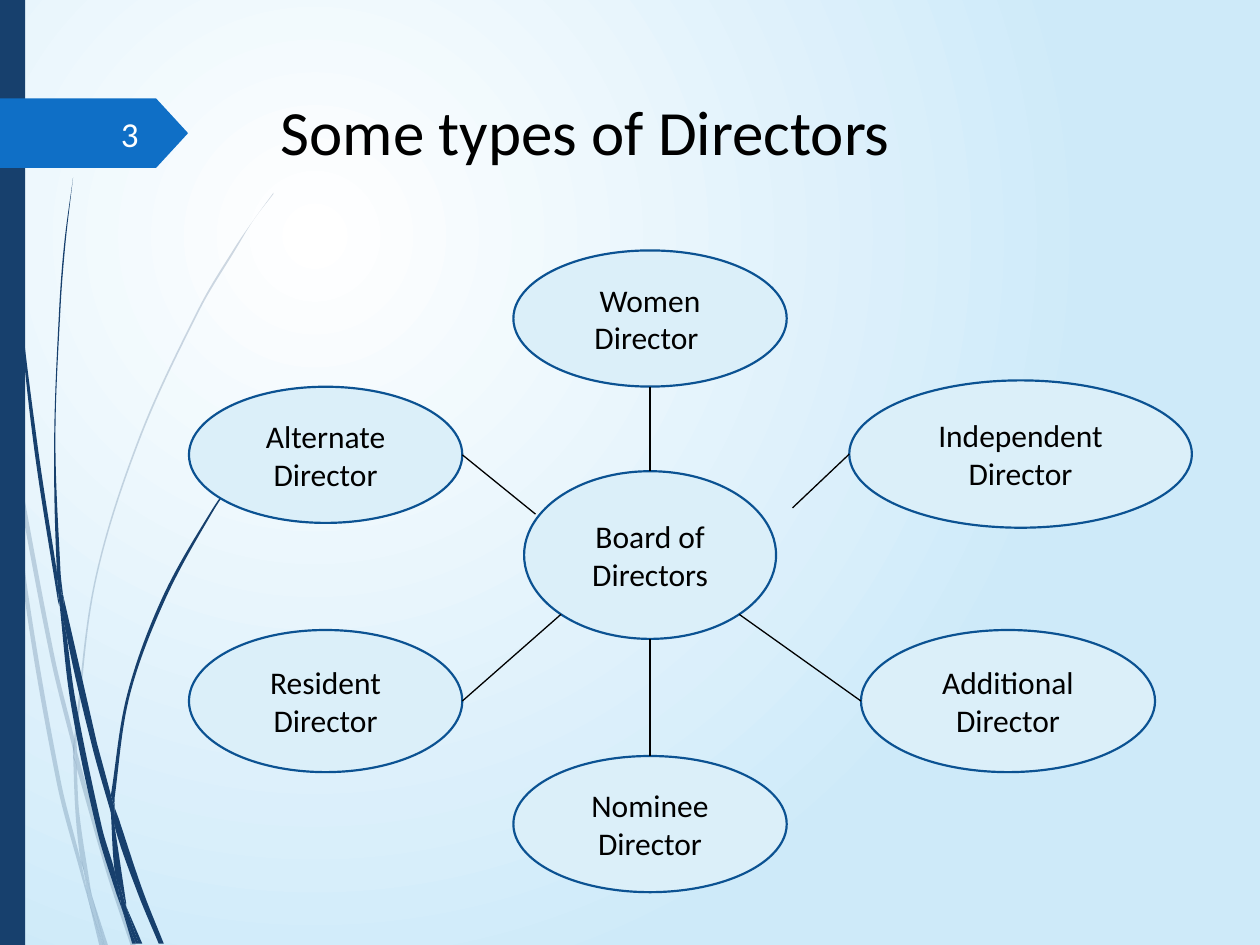
"""Build a slide that shows the types of directors around the board."""
from math import dist, sqrt

from lxml import etree
from pptx import Presentation
from pptx.dml.color import RGBColor
from pptx.enum.shapes import MSO_CONNECTOR, MSO_SHAPE
from pptx.enum.text import MSO_ANCHOR, PP_ALIGN
from pptx.oxml.ns import qn
from pptx.util import Pt

OVAL, RECT, TAG = MSO_SHAPE.OVAL, MSO_SHAPE.RECTANGLE, MSO_SHAPE.PENTAGON
STRAIGHT = MSO_CONNECTOR.STRAIGHT
TOP, MIDDLE = MSO_ANCHOR.TOP, MSO_ANCHOR.MIDDLE
CENTER, RIGHT, JUSTIFY = PP_ALIGN.CENTER, PP_ALIGN.RIGHT, PP_ALIGN.JUSTIFY

FONT = "Calibri"
UNIT = 0.72
COLORS = {
    "navy": "17406D", "blue": "0F6FC6", "edge": "0B5292", "oval": "DBEFF9",
    "black": "000000", "white": "FFFFFF", "sky": "CEEAF9", "page": "FEFFFF",
}

PALE = [
    [(8, 350, 6, 322, 0, 282), (0, 299, 7, 344)],
    [(12, 376, 40, 522, 59, 599), (59, 586, 43, 520, 10, 345)],
    [(61, 610, 85, 694, 104, 751), (108, 751, 88, 692, 64, 607, 61, 596)],
    [(73, 711, 83, 751), (86, 751)],
    [(8, 350, 19, 470, 45, 621, 64, 693, 70, 714),
     (69, 707, 64, 683, 48, 619, 22, 469, 12, 376)],
    [(58, 599, 60, 646, 64, 683, 67, 692, 73, 711),
     (72, 706, 63, 646, 61, 610, 61, 608)],
    [(61, 596, 61, 584, 76, 462, 111, 349, 159, 245, 187, 198, 201, 175, 217, 154),
     (217, 153, 201, 175, 186, 197, 158, 244, 110, 348, 75, 461, 59, 584, 59, 586)],
    [(70, 714, 79, 751), (82, 751)],
    [(59, 586, 58, 599, 61, 608), (61, 610, 61, 596)],
    [(65, 683, 69, 707, 70, 714, 82, 751), (83, 751, 73, 711, 67, 692)],
]
DARK = [
    [(2, 0, 3, 48, 5, 110, 14, 233, 27, 355, 46, 477, 47, 481),
     (45, 453, 30, 355, 15, 232, 6, 109, 4, 48, 3, 0)],
    [(50, 472, 53, 505, 73, 592, 88, 645), (88, 633, 88, 631, 77, 590)],
    [(91, 641, 91, 656, 109, 708, 126, 749), (130, 749, 113, 706, 94, 649)],
    [(47, 477, 56, 557, 77, 659, 92, 708, 97, 722),
     (96, 717, 91, 691, 81, 657, 60, 556, 53, 505)],
    [(50, 472, 48, 453, 44, 349, 48, 245, 52, 193, 58, 141),
     (58, 141, 51, 193, 47, 245, 43, 349, 45, 449, 49, 472)],
    [(100, 719, 110, 749), (113, 749)],
    [(45, 449, 45, 453, 47, 477, 53, 505), (50, 472, 49, 472)],
    [(91, 641, 91, 633, 103, 552, 131, 476, 169, 406, 191, 374, 203, 359, 216, 344),
     (215, 344, 203, 358, 191, 373, 168, 405, 129, 474, 101, 551, 88, 631)],
    [(97, 722, 105, 749), (108, 749)],
    [(88, 645, 91, 691, 96, 706, 100, 719), (100, 716, 91, 656, 90, 651)],
    [(88, 631, 88, 645, 91, 656), (91, 641)],
    [(91, 691, 96, 717, 97, 722, 108, 749), (110, 749, 100, 719, 96, 706)],
]


def rgb(name):
    """Return the named colour."""
    return RGBColor.from_string(COLORS[name])


def paint(shape, fill, line=None):
    """Set the fill and outline of a shape and drop its shadow."""
    shape.shadow.inherit = False
    shape.fill.solid()
    shape.fill.fore_color.rgb = rgb(fill)
    if line:
        shape.line.color.rgb = rgb(line)
        shape.line.width = Pt(1.25)
    else:
        shape.line.fill.background()


def write(shape, text, size=18, color="black", align=CENTER, anchor=MIDDLE):
    """Put formatted text in a shape."""
    frame = shape.text_frame
    frame.word_wrap = True
    frame.vertical_anchor = anchor
    para = frame.paragraphs[0]
    para.alignment = align
    run = para.add_run()
    run.text = text
    run.font.name = FONT
    run.font.size = Pt(size)
    run.font.color.rgb = rgb(color)


def label(slide, box, text, **style):
    """Add a text box."""
    write(slide.shapes.add_textbox(*map(Pt, box)), text, **style)


def block(slide, kind, box, fill, line=None):
    """Add a painted preset shape."""
    shape = slide.shapes.add_shape(kind, *map(Pt, box))
    paint(shape, fill, line)
    return shape


def oval(slide, box, text):
    """Add an ellipse that holds a kind of director."""
    shape = block(slide, OVAL, box, "oval", "edge")
    write(shape, text)
    return shape


def link(slide, start, end, joint=None):
    """Draw a thin line, joined to the top of a shape where it ends there."""
    line = slide.shapes.add_connector(STRAIGHT, *map(Pt, start + end))
    line.line.color.rgb = rgb("black")
    line.line.width = Pt(0.75)
    if joint is not None:
        line.end_connect(joint, 0)
    etree.SubElement(line._element.spPr, qn("a:effectLst"))


def lean(a, b, c, near):
    """Return a control point near one end of the piece that a smooth edge needs."""
    pull = near / (3 * dist(a, c))
    return [round(q + (r - p) * pull) for p, q, r in zip(a, b, c)]


def bend(shape, first):
    """Turn the lines along the two edges of an outline into smooth curves."""
    nodes = list(shape._element.spPr.find(".//" + qn("a:path")))[:-1]
    spots = [(int(node[0].get("x")), int(node[0].get("y"))) for node in nodes]
    for low, high in ((0, first), (first, len(spots))):
        for i in range(low + 1, high):
            b, c = spots[i - 1], spots[i]
            a, d = spots[max(i - 2, low)], spots[min(i + 1, high - 1)]
            near = dist(b, c)
            nodes[i].tag = qn("a:cubicBezTo")
            for x, y in (lean(d, c, b, near), lean(a, b, c, near)):
                nodes[i].insert(0, etree.Element(qn("a:pt"), x=str(x), y=str(y)))


def blade(slide, edges, alpha=None):
    """Draw a piece of grass between two edges."""
    spots = [(Pt(x * UNIT), Pt(y * UNIT)) for edge in edges
             for x, y in zip(edge[::2], edge[1::2])]
    form = slide.shapes.build_freeform(*spots[0])
    form.add_line_segments(spots[1:], close=True)
    shape = form.convert_to_shape()
    bend(shape, len(edges[0]) // 2)
    paint(shape, "navy")
    if alpha:
        tint = shape._element.spPr.find(qn("a:solidFill"))[0]
        etree.SubElement(tint, qn("a:alpha"), val=str(alpha * 1000))


def backdrop(slide):
    """Give the slide a round white-to-sky gradient."""
    fill = slide.background.fill
    fill.gradient()
    for stop, name, place in zip(fill.gradient_stops, ("white", "sky"), (0, 1)):
        stop.color.rgb = rgb(name)
        stop.position = place
    grad = slide._element.find(".//" + qn("a:gradFill"))
    grad.remove(grad.find(qn("a:lin")))
    ring = etree.SubElement(grad, qn("a:path"), path="circle")
    etree.SubElement(ring, qn("a:fillToRect"), l="50000", t="50000", r="100000", b="100000")


def chart(slide):
    """Draw the board, the directors and the lines between them."""
    mid, hub_y, wide, high = 371.5, 317.2, 144, 95.8
    crown, base = hub_y - high / 2, hub_y + high / 2
    dx, dy = wide / sqrt(8), high / sqrt(8)
    hub = oval(slide, (mid - wide / 2, crown, wide, high), "Board of Directors")
    oval(slide, (293.4, 143.1, 156.2, 77.8), "Women Director ")
    oval(slide, (485.3, 217.4, 195.8, 84.2), "Independent Director")
    oval(slide, (492, 360, 168, 81.2), "Additional Director")
    nominee = oval(slide, (293.4, 432, 156.2, 77.8), "Nominee Director")
    oval(slide, (108, 221, 156.2, 77.8), "Alternate Director")
    oval(slide, (108, 360, 156.2, 81.2), "Resident Director")
    link(slide, (mid, 220.9), (mid, crown), hub)
    link(slide, (mid, base), (mid, 432), nominee)
    link(slide, (485.3, 259.5), (452.9, 290.2))
    link(slide, (492, 400.6), (mid + dx, hub_y + dy))
    link(slide, (264.2, 400.6), (mid - dx, hub_y + dy))
    link(slide, (264.2, 259.9), (306, 293.8))


def main():
    """Build and save the slide."""
    deck = Presentation()
    deck.slide_width, deck.slide_height = Pt(720), Pt(540)
    slide = deck.slides.add_slide(deck.slide_layouts[6])
    backdrop(slide)
    for edges in PALE:
        blade(slide, edges, alpha=20)
    for edges in DARK:
        blade(slide, edges)
    block(slide, RECT, (0, 0, 14.4, 540), "navy")
    block(slide, TAG, (0, 56.2, 107.5, 39.8), "blue").adjustments[0] = 0.46
    label(slide, (153.4, 49.3, 519, 100.8), "Some types of Directors",
          size=36, align=JUSTIFY, anchor=TOP)
    chart(slide)
    label(slide, (40.3, 62, 46, 28.8), "3", size=20, color="page", align=RIGHT)
    deck.save("out.pptx")


if __name__ == "__main__":
    main()
